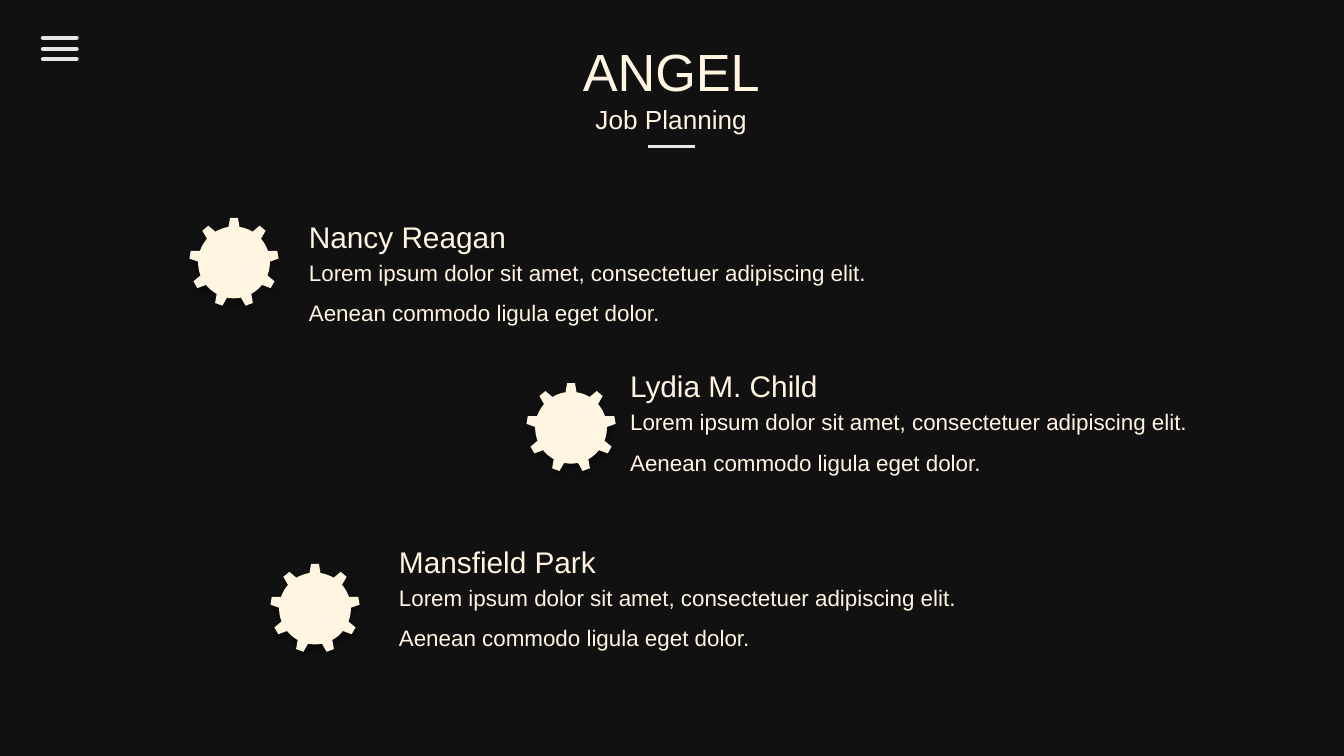
import math
from dataclasses import dataclass

from lxml import etree
from pptx import Presentation
from pptx.dml.color import RGBColor
from pptx.enum import shapes, text
from pptx.oxml import ns
from pptx.util import Inches, Pt

CELL = Inches(0.1)
COLUMNS, ROWS = 100, 56.25
DARK, CREAM, GREY, BLACK = "111111", "FFF5E1", "E7E6E6", "000000"
FONT = "Arial"
LOREM = (
    "Lorem ipsum dolor sit amet, consectetuer adipiscing elit. "
    "Aenean commodo ligula eget dolor."
)
TEETH, ARC_STEPS = 9, 6
TIP_RADIUS, BODY_RADIUS = 3.33, 2.67
TIP_HALF_ANGLE, ROOT_HALF_ANGLE = 5, 8.8


@dataclass(frozen=True)
class Label:
    wording: str
    column: float
    row: float
    width: float
    height: float
    size: float
    centred: bool = False
    spacing: float = 1.0


@dataclass(frozen=True)
class Rule:
    start: float
    end: float
    row: float
    weight: float
    cap: str = "flat"


@dataclass(frozen=True)
class Job:
    person: str
    column: float
    row: float
    name_width: float
    detail_width: float
    gear_column: float
    gear_row: float


HEADINGS = [
    Label("ANGEL", 42.3, 2.4, 15.3, 5.7, 28, centred=True),
    Label("Job Planning", 35.8, 7.2, 28.3, 3.4, 14, centred=True),
]
UNDERLINE = Rule(48.2, 51.7, 10.9, 1.5)
MENU_BARS = [Rule(3.2, 5.7, row, 2.25, "rnd") for row in (2.8, 3.65, 4.4)]
JOBS = [
    Job("Nancy Reagan", 22, 15.8, 16.8, 47.2, 17.41, 19.53),
    Job("Lydia M. Child", 45.9, 26.9, 16.1, 43.7, 42.49, 31.83),
    Job("Mansfield Park", 28.7, 39.95, 16.9, 48.7, 23.44, 45.28),
]


def cells(count: float) -> int:
    return round(count * CELL)


def colour(value: str) -> RGBColor:
    return RGBColor.from_string(value)


def draw_label(page, label: Label) -> None:
    box = page.shapes.add_textbox(
        cells(label.column), cells(label.row), cells(label.width), cells(label.height)
    )
    box.text_frame.text = label.wording
    box.text_frame.word_wrap = True
    para = box.text_frame.paragraphs[0]
    para.line_spacing = label.spacing
    para.alignment = text.PP_ALIGN.CENTER if label.centred else text.PP_ALIGN.LEFT
    span = para.runs[0]
    span.font.name = FONT
    span.font.size = Pt(label.size)
    span.font.color.rgb = colour(CREAM)


def draw_rule(page, rule: Rule) -> None:
    line = page.shapes.add_connector(
        shapes.MSO_CONNECTOR.STRAIGHT,
        cells(rule.start), cells(rule.row), cells(rule.end), cells(rule.row),
    )
    line.line.color.rgb = colour(GREY)
    line.line.width = Pt(rule.weight)
    line.line._get_or_add_ln().set("cap", rule.cap)
    etree.SubElement(line._element.spPr, ns.qn("a:effectLst"))


def add_shadow(shape) -> None:
    shape.shadow.inherit = False
    effects = shape._element.spPr.find(ns.qn("a:effectLst"))
    shadow = etree.SubElement(
        effects, ns.qn("a:outerShdw"),
        blurRad=str(Pt(4)), dist=str(Pt(3)), dir="5400000", rotWithShape="0",
    )
    tone = etree.SubElement(shadow, ns.qn("a:srgbClr"), val=BLACK)
    etree.SubElement(tone, ns.qn("a:alpha"), val="40000")


def gear_outline(column: float, row: float) -> list[tuple[int, int]]:
    pitch = 360 / TEETH
    gap = pitch - 2 * ROOT_HALF_ANGLE
    polar = []
    for tooth in range(TEETH):
        middle = tooth * pitch - 90
        polar += [(TIP_RADIUS, middle - TIP_HALF_ANGLE), (TIP_RADIUS, middle + TIP_HALF_ANGLE)]
        polar += [
            (BODY_RADIUS, middle + ROOT_HALF_ANGLE + gap * step / ARC_STEPS)
            for step in range(ARC_STEPS + 1)
        ]
    return [
        (
            cells(column + radius * math.cos(math.radians(angle))),
            cells(row + radius * math.sin(math.radians(angle))),
        )
        for radius, angle in polar
    ]


def draw_gear(page, column: float, row: float) -> None:
    first, *rest = gear_outline(column, row)
    builder = page.shapes.build_freeform(*first)
    builder.add_line_segments(rest, close=True)
    gear = builder.convert_to_shape()
    gear.fill.solid()
    gear.fill.fore_color.rgb = colour(CREAM)
    gear.line.fill.background()
    add_shadow(gear)


def draw_job(page, job: Job) -> None:
    draw_gear(page, job.gear_column, job.gear_row)
    draw_label(page, Label(job.person, job.column, job.row, job.name_width, 3.7, 16))
    draw_label(
        page,
        Label(LOREM, job.column, job.row + 2, job.detail_width, 6.8, 12, spacing=1.5),
    )


def main() -> None:
    deck = Presentation()
    deck.slide_width, deck.slide_height = cells(COLUMNS), cells(ROWS)
    page = deck.slides.add_slide(deck.slide_layouts[6])
    page.background.fill.solid()
    page.background.fill.fore_color.rgb = colour(DARK)
    for heading in HEADINGS:
        draw_label(page, heading)
    for rule in [UNDERLINE, *MENU_BARS]:
        draw_rule(page, rule)
    for job in JOBS:
        draw_job(page, job)
    deck.save("out.pptx")


if __name__ == "__main__":
    main()
